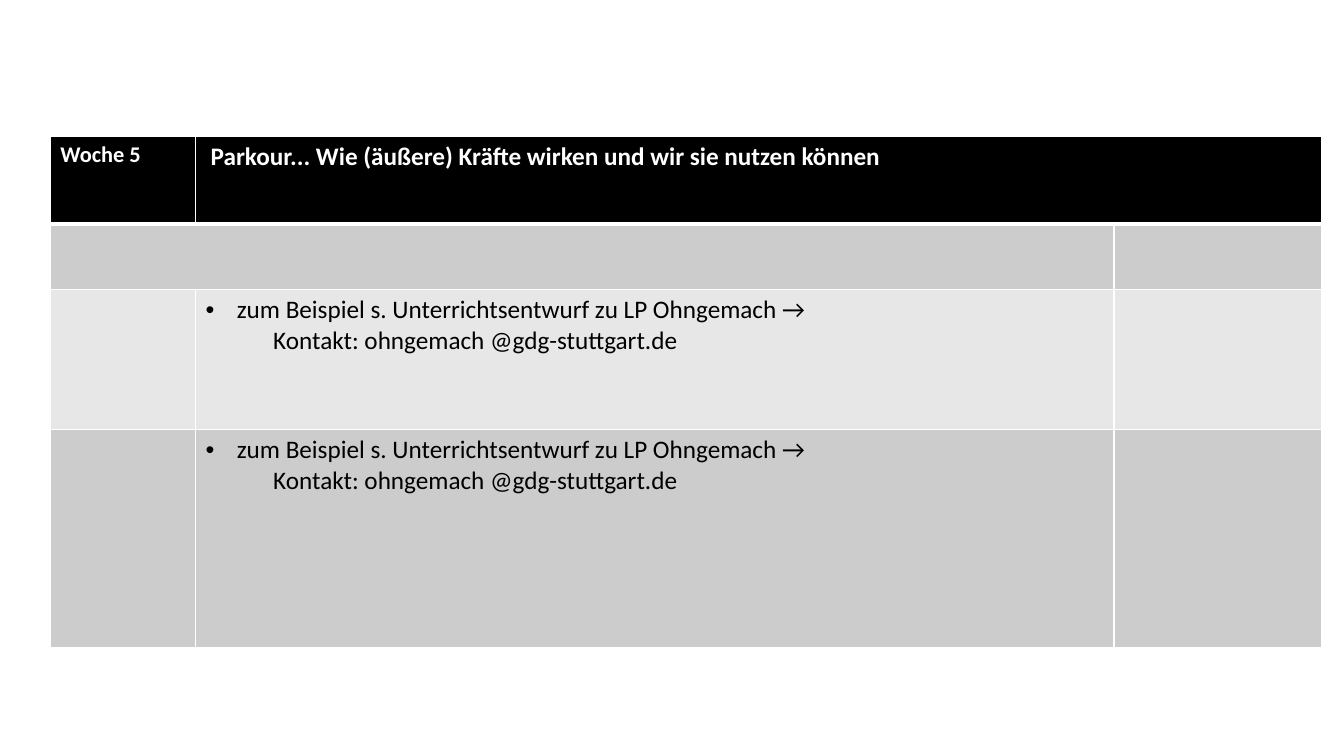
import lxml.etree
import pptx
import pptx.dml.color
import pptx.oxml.ns
import pptx.util

Inches = pptx.util.Inches
Pt = pptx.util.Pt

COLORS = {"header": "000000", "dark": "CCCCCC", "light": "E7E7E7",
          "white": "FFFFFF", "black": "000000"}
FONT = "Calibri"
TABLE_LEFT, TABLE_TOP = 0.5, 1.35
COLUMN_WIDTHS = [1.44, 9.11, 2.06]
ROW_HEIGHTS = [0.87, 0.65, 1.39, 2.17]
ROW_FILLS = ["header", "dark", "light", "dark"]
MERGES = [((0, 1), (0, 2)), ((1, 0), (1, 1))]
HEADERS = [("Woche 5", 16, 0.1), ("Parkour... Wie (äußere) Kräfte wirken und wir sie nutzen können", 18, 0.15)]
EXAMPLE = "zum Beispiel s. Unterrichtsentwurf zu LP Ohngemach →"
CONTACT = "Kontakt: ohngemach @gdg-stuttgart.de"
EXAMPLE_ROWS = [2, 3]


def rgb(name):
    return pptx.dml.color.RGBColor.from_string(COLORS[name])


def add_element(parent, tag, **attributes):
    return lxml.etree.SubElement(parent, pptx.oxml.ns.qn(tag), **attributes)


def write_text(paragraph, text, size=18, color="black", bold=False, left=0, hanging=0, bullet=None):
    run = paragraph.add_run()
    run.text = text
    run.font.name = FONT
    run.font.size = Pt(size)
    run.font.bold = bold
    run.font.color.rgb = rgb(color)
    properties = paragraph._p.get_or_add_pPr()
    properties.set("marL", str(Inches(left)))
    properties.set("indent", str(-Inches(hanging)))
    if bullet:
        add_element(properties, "a:buFont", typeface="Arial")
        add_element(properties, "a:buChar", char=bullet)


def set_borders(cell, widths):
    properties = cell._tc.get_or_add_tcPr()
    for side in ("L", "R", "T", "B"):
        line = add_element(properties, f"a:ln{side}", w=str(Pt(widths.get(side, 1))))
        fill = add_element(line, "a:solidFill")
        add_element(fill, "a:srgbClr", val=COLORS["white"])


def build_table(slide):
    frame = slide.shapes.add_table(
        len(ROW_HEIGHTS), len(COLUMN_WIDTHS), Inches(TABLE_LEFT), Inches(TABLE_TOP),
        Inches(sum(COLUMN_WIDTHS)), Inches(sum(ROW_HEIGHTS)))
    table = frame.table
    for column, width in zip(table.columns, COLUMN_WIDTHS):
        column.width = Inches(width)
    for index, (row, height) in enumerate(zip(table.rows, ROW_HEIGHTS)):
        row.height = Inches(height)
        for cell in row.cells:
            set_borders(cell, {0: {"B": 3}, 1: {"T": 3}}.get(index, {}))
            cell.fill.solid()
            cell.fill.fore_color.rgb = rgb(ROW_FILLS[index])
    for start, end in MERGES:
        table.cell(*start).merge(table.cell(*end))

    for column, (text, size, margin) in enumerate(HEADERS):
        cell = table.cell(0, column)
        cell.margin_left = Inches(margin)
        write_text(cell.text_frame.paragraphs[0], text, size=size, color="white", bold=True)
    for row in EXAMPLE_ROWS:
        text_frame = table.cell(row, 1).text_frame
        write_text(text_frame.paragraphs[0], EXAMPLE, left=0.31, hanging=0.31, bullet="•")
        write_text(text_frame.add_paragraph(), CONTACT, left=0.67)


def main():
    presentation = pptx.Presentation()
    presentation.slide_width = Inches(13.33)
    presentation.slide_height = Inches(7.5)
    slide = presentation.slides.add_slide(presentation.slide_layouts[6])
    build_table(slide)
    presentation.save("out.pptx")


if __name__ == "__main__":
    main()
